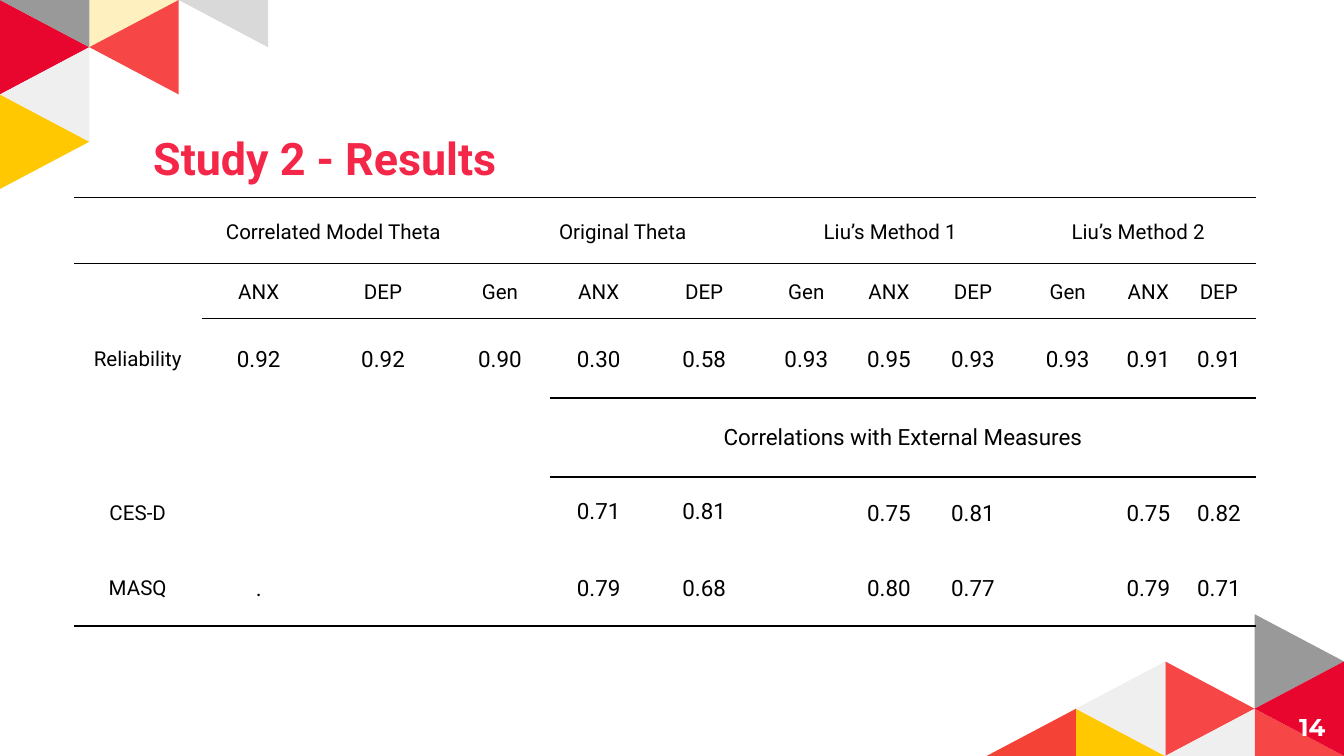
from lxml.etree import SubElement
from pptx import Presentation
from pptx.dml.color import RGBColor
from pptx.enum.text import MSO_ANCHOR, PP_ALIGN
from pptx.oxml.ns import qn
from pptx.util import Inches, Pt

W, H = 10, 10 * 9 / 16
COL, ROW = W / 15.04, H / 16  # half-triangle grid

BLACK = RGBColor(0, 0, 0)
WHITE = RGBColor(255, 255, 255)
ROSE = RGBColor(0xF4, 0x27, 0x48)
RED = RGBColor(0xE8, 0x06, 0x2F)
CORAL = RGBColor(0xF6, 0x46, 0x46)
BRICK = RGBColor(0xF4, 0x43, 0x36)
GOLD = RGBColor(0xFF, 0xC8, 0x00)
GREY = RGBColor(0x99, 0x99, 0x99)
SILVER = RGBColor(0xD9, 0xD9, 0xD9)
PALE = RGBColor(0xEF, 0xEF, 0xEF)

# Triangles: colour, opacity, grid points counted from the corner
TOP = [
    (RED, 100, [(0, 0), (0, 2), (1, 1)]),
    (GOLD, 100, [(0, 2), (0, 4), (1, 3)]),
    (GOLD, 25, [(1, 0), (1, 1), (2, 0)]),
    (PALE, 100, [(1, 1), (0, 2), (1, 3)]),
    (CORAL, 100, [(2, 0), (1, 1), (2, 2)]),
    (GREY, 100, [(0, 0), (1, 1), (1, 0)]),
    (SILVER, 100, [(3, 0), (3, 1), (2, 0)]),
]
BOTTOM = [
    (GREY, 100, [(1, 3), (1, 1), (0, 2)]),
    (GOLD, 100, [(3, 1), (3, 0), (2, 0)]),
    (CORAL, 100, [(2, 2), (2, 0), (1, 1)]),
    (CORAL, 100, [(1, 1), (1, 0), (0, 0)]),
    (PALE, 100, [(2, 2), (3, 1), (2, 0)]),
    (PALE, 100, [(1, 1), (2, 0), (1, 0)]),
    (RED, 100, [(0, 2), (1, 1), (0, 0)]),
    (BRICK, 100, [(3, 1), (4, 0), (3, 0)]),
]

WIDTHS = [0.95, 0.85, 1, 0.74, 0.73, 0.84, 0.68, 0.55, 0.7, 0.71, 0.49, 0.56]
HEIGHTS = [0.49, 0.41, 0.59, 0.59, 0.52, 0.59]
RULES = [0, 0, 1, 4, 4, 12, 0]  # first column of the rule above each row
SPANS = [(0, 1, 2), (0, 4, 5), (0, 6, 8), (0, 9, 11), (3, 4, 11)]
ALIGNS = {(0, 1): PP_ALIGN.RIGHT, (0, 4): PP_ALIGN.LEFT}
TIGHT = [(3, 4), (4, 4), (4, 5)]  # cells with single line spacing
ROWS = [
    ["", "Correlated Model Theta", "", "", "Original Theta", "",
     "Liu’s Method 1", "", "", "Liu’s Method 2", "", ""],
    ["", "ANX", "DEP", "Gen", "ANX", "DEP", "Gen", "ANX", "DEP",
     "Gen", "ANX", "DEP"],
    ["Reliability", "0.92", "0.92", "0.90", "0.30", "0.58", "0.93", "0.95",
     "0.93", "0.93", "0.91", "0.91"],
    ["", "", "", "", "Correlations with External Measures",
     "", "", "", "", "", "", ""],
    ["CES-D", "", "", "", "0.71", "0.81", "", "0.75", "0.81",
     "", "0.75", "0.82"],
    ["MASQ", ".", "", "", "0.79", "0.68", "", "0.80", "0.77",
     "", "0.79", "0.71"],
]


def assign(item, values):
    for name, value in values.items():
        setattr(item, name, value)


def write(frame, text, align, color, font, inset=0.1):
    """Put one formatted paragraph in a text frame or cell."""
    assign(frame, {"margin_left": Inches(inset), "margin_right": Inches(inset),
                   "margin_top": Inches(0.1), "margin_bottom": Inches(0.1)})
    para = getattr(frame, "text_frame", frame).paragraphs[0]
    para.alignment = align
    run = para.add_run()
    run.text = text
    assign(run.font, font)
    run.font.color.rgb = color
    return para


def mosaic(slide, pieces, flip=False):
    """Draw triangles from the top left, or from the bottom right."""
    for color, alpha, points in pieces:
        spots = [(Inches(W - x * COL if flip else x * COL),
                  Inches(H - y * ROW if flip else y * ROW))
                 for x, y in points]
        draft = slide.shapes.build_freeform(*spots[0])
        draft.add_line_segments(spots[1:], close=True)
        shape = draft.convert_to_shape()
        shape.shadow.inherit = False
        shape.line.fill.background()
        shape.fill.solid()
        shape.fill.fore_color.rgb = color
        if alpha < 100:
            tint = shape.fill._xPr.find(".//" + qn("a:srgbClr"))
            SubElement(tint, qn("a:alpha"), val=str(alpha * 1000))


def border(cell, above, below):
    """Rule a cell above and below, with bare sides."""
    props = cell._tc.get_or_add_tcPr()
    for side, shown in zip("LRTB", (False, False, above, below)):
        line = SubElement(props, qn("a:ln" + side), w=str(Pt(1)))
        if shown:
            fill = SubElement(line, qn("a:solidFill"))
            SubElement(fill, qn("a:srgbClr"), val=str(BLACK))
        else:
            SubElement(line, qn("a:noFill"))


def results(slide):
    frame = slide.shapes.add_table(
        len(HEIGHTS), len(WIDTHS), Inches(0.55), Inches(1.47),
        Inches(sum(WIDTHS)), Inches(sum(HEIGHTS)))
    table = frame.table
    assign(table, {"first_row": False, "horz_banding": False})
    for col, width in zip(table.columns, WIDTHS):
        col.width = Inches(width)
    for row, height in zip(table.rows, HEIGHTS):
        row.height = Inches(height)
    for r, first, last in SPANS:
        table.cell(r, first).merge(table.cell(r, last))
    for r, texts in enumerate(ROWS):
        for c, text in enumerate(texts):
            cell = table.cell(r, c)
            border(cell, c >= RULES[r], c >= RULES[r + 1])
            cell.fill.background()
            if not text:
                continue
            cell.vertical_anchor = MSO_ANCHOR.MIDDLE
            size = 11 if r < 2 or c == 0 else 12
            para = write(cell, text, ALIGNS.get((r, c), PP_ALIGN.CENTER),
                         BLACK, {"name": "Roboto", "size": Pt(size)}, 0.07)
            if (r, c) not in TIGHT:
                assign(para, {"line_spacing": 1.15, "space_after": Pt(10)})


def heading(slide):
    title = slide.shapes.title
    assign(title, {"left": Inches(1.04), "top": Inches(0.87),
                   "width": Inches(7.91), "height": Inches(0.73)})
    title.text_frame.vertical_anchor = MSO_ANCHOR.TOP
    write(title.text_frame, "Study 2 - Results", PP_ALIGN.LEFT, ROSE,
          {"name": "Roboto", "size": Pt(24), "bold": True})


def number(slide):
    box = slide.shapes.add_textbox(
        Inches(9.36), Inches(5.19), Inches(0.6), Inches(0.43))
    assign(box.text_frame, {"word_wrap": True,
                            "vertical_anchor": MSO_ANCHOR.MIDDLE})
    write(box.text_frame, "14", PP_ALIGN.RIGHT, WHITE,
          {"name": "Montserrat", "size": Pt(13), "bold": True})


def main():
    deck = Presentation()
    assign(deck, {"slide_width": Inches(W), "slide_height": Inches(H)})
    slide = deck.slides.add_slide(deck.slide_layouts[5])
    # Corner decoration
    mosaic(slide, BOTTOM, flip=True)
    mosaic(slide, TOP)
    # Content
    heading(slide)
    results(slide)
    number(slide)
    deck.save("out.pptx")


if __name__ == "__main__":
    main()
